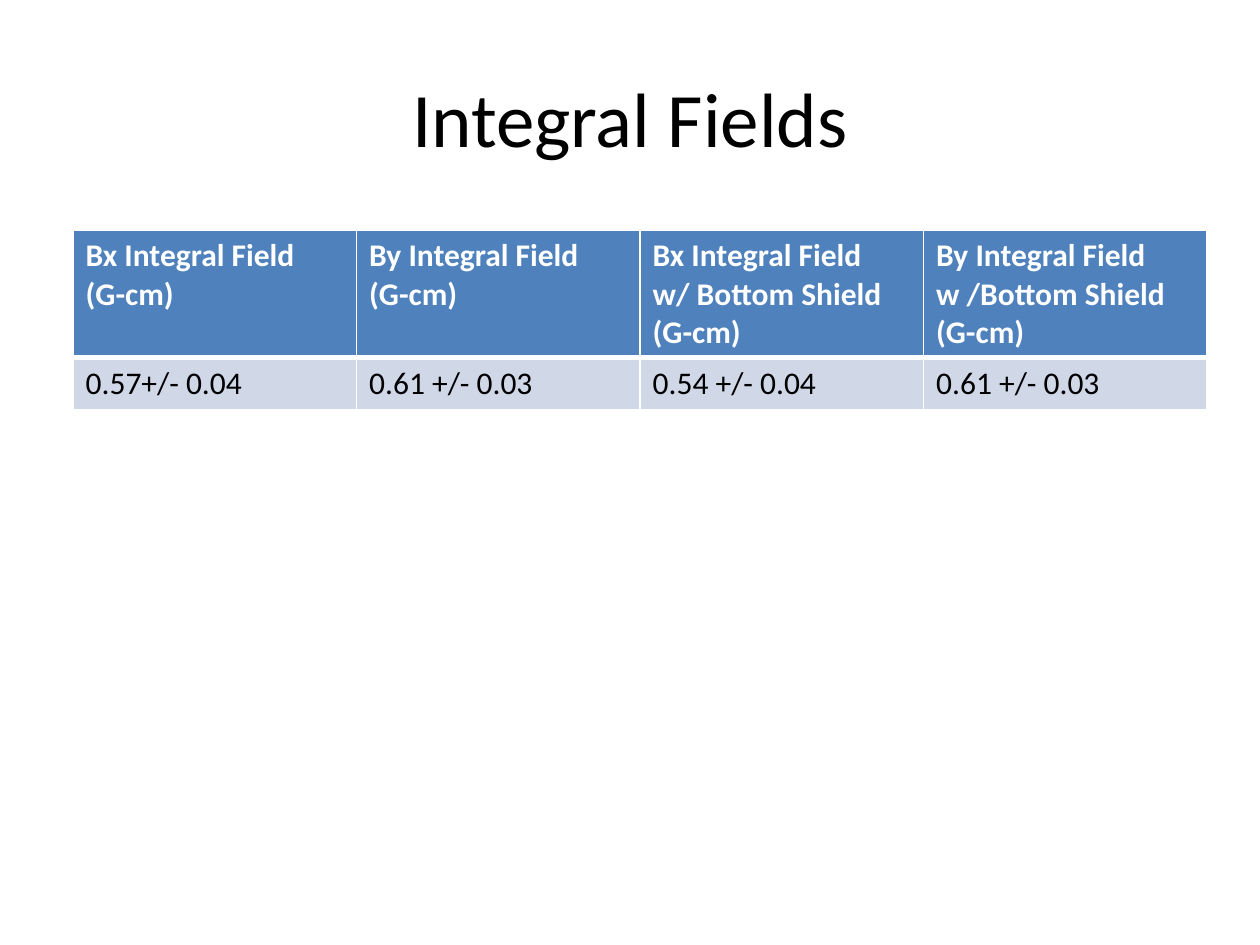
import pptx
import pptx.dml.color
import pptx.enum.text
import pptx.oxml
import pptx.oxml.ns
import pptx.util

Pt = pptx.util.Pt
ALIGN = pptx.enum.text.PP_ALIGN
ANCHOR = pptx.enum.text.MSO_ANCHOR

# Content
TITLE = "Integral Fields"
HEADINGS = [
    "Bx Integral Field\n(G-cm)",
    "By Integral Field\n(G-cm)",
    "Bx Integral Field\nw/ Bottom Shield\n(G-cm)",
    "By Integral Field\nw /Bottom Shield\n(G-cm)",
]
MEASUREMENTS = ["0.57+/- 0.04", "0.61 +/- 0.03", "0.54 +/- 0.04", "0.61 +/- 0.03"]

# Row formats; border widths are in points
HEADER = dict(height=72.72, fill="4F81BD", color="FFFFFF", bold=True,
              borders=dict(L=1, R=1, T=1, B=3))
BODY = dict(height=29.5, fill="D0D8E8", color="000000", bold=False,
            borders=dict(L=1, R=1, T=3, B=1))
ROWS = [(HEADINGS, HEADER), (MEASUREMENTS, BODY)]
TABLE_LEFT, TABLE_TOP, TABLE_WIDTH = 41.76, 131.76, 648


def rgb(value):
    return pptx.dml.color.RGBColor.from_string(value)


def write(frame, text, *, size, color, bold=False, align=ALIGN.LEFT, anchor=ANCHOR.TOP):
    frame.word_wrap = True
    frame.vertical_anchor = anchor
    frame.text = text
    for paragraph in frame.paragraphs:
        paragraph.alignment = align
        font = paragraph.runs[0].font
        font.name, font.size, font.bold = "Calibri", Pt(size), bold
        font.color.rgb = rgb(color)


def set_borders(cell, widths, color="FFFFFF"):
    properties = cell._tc.get_or_add_tcPr()
    for side, width in widths.items():
        properties.append(pptx.oxml.parse_xml(
            f'<a:ln{side} {pptx.oxml.ns.nsdecls("a")} w="{Pt(width)}">'
            f'<a:solidFill><a:srgbClr val="{color}"/></a:solidFill></a:ln{side}>'))


presentation = pptx.Presentation()
presentation.slide_width, presentation.slide_height = Pt(720), Pt(540)
slide = presentation.slides.add_slide(presentation.slide_layouts[6])

# Title
title = slide.shapes.add_textbox(Pt(36), Pt(21.6), Pt(648), Pt(90))
write(title.text_frame, TITLE, size=44, color="000000",
      align=ALIGN.CENTER, anchor=ANCHOR.MIDDLE)

# Table of integral fields
table_height = sum(style["height"] for _, style in ROWS)
fields = slide.shapes.add_table(
    len(ROWS), len(HEADINGS), Pt(TABLE_LEFT), Pt(TABLE_TOP),
    Pt(TABLE_WIDTH), Pt(table_height)).table
for row, (texts, style) in enumerate(ROWS):
    fields.rows[row].height = Pt(style["height"])
    for column, text in enumerate(texts):
        cell = fields.cell(row, column)
        write(cell.text_frame, text, size=18, color=style["color"], bold=style["bold"])
        set_borders(cell, style["borders"])
        cell.fill.solid()
        cell.fill.fore_color.rgb = rgb(style["fill"])

presentation.save("out.pptx")
